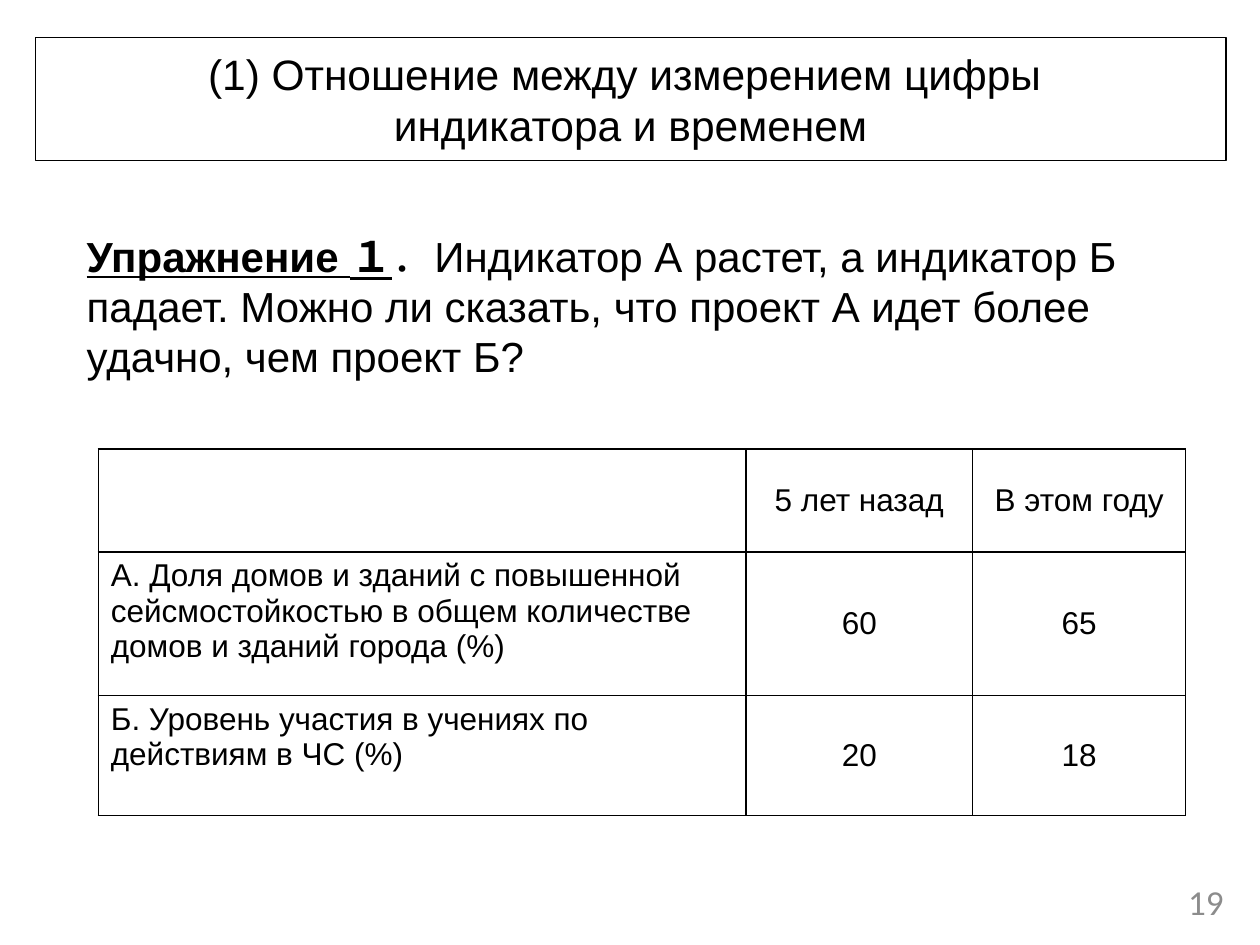
from dataclasses import dataclass

from lxml import etree
from pptx import Presentation
from pptx.dml.color import RGBColor
from pptx.enum.shapes import MSO_SHAPE
from pptx.enum.text import MSO_ANCHOR, PP_ALIGN
from pptx.oxml.ns import qn
from pptx.util import Inches, Pt

RECTANGLE = MSO_SHAPE.RECTANGLE
TOP, MIDDLE = MSO_ANCHOR.TOP, MSO_ANCHOR.MIDDLE
LEFT, CENTER, RIGHT = PP_ALIGN.LEFT, PP_ALIGN.CENTER, PP_ALIGN.RIGHT


@dataclass(frozen=True)
class Theme:
    ink: str = "000000"
    paper: str = "FFFFFF"
    muted: str = "8C8C8C"
    font: str = "Arial"
    number_font: str = "Calibri"
    title_size: float = 24.3
    body_size: float = 24
    table_size: float = 18
    number_size: float = 20
    frame_width: float = 0.75
    border_width: float = 1


class Page:
    """One blank slide; positions and sizes are shares of its width and height."""

    def __init__(self, deck, theme):
        self.deck, self.theme = deck, theme
        self.slide = deck.slides.add_slide(deck.slide_layouts[6])

    def area(self, left, top, width, height):
        across, down = self.deck.slide_width, self.deck.slide_height
        return [int(share * side) for share, side in
                zip((left, top, width, height), (across, down, across, down))]

    def style(self, para, size, align=LEFT, color=None, font=None):
        para.alignment = align
        para.font.size = Pt(size)
        para.font.name = font or self.theme.font
        para.font.color.rgb = RGBColor.from_string(color or self.theme.ink)

    def title(self, text, *place):
        box = self.slide.shapes.add_shape(RECTANGLE, *self.area(*place))
        box.shadow.inherit = False
        box.fill.background()
        box.line.color.rgb = RGBColor.from_string(self.theme.ink)
        box.line.width = Pt(self.theme.frame_width)
        box.text_frame.vertical_anchor = MIDDLE
        box.text_frame.text = text
        self.style(box.text_frame.paragraphs[0], self.theme.title_size, CENTER)

    def text_box(self, place, anchor=TOP):
        frame = self.slide.shapes.add_textbox(*self.area(*place)).text_frame
        frame.word_wrap = True
        frame.vertical_anchor = anchor
        return frame.paragraphs[0]

    def exercise(self, label, question, *place):
        para = self.text_box(place)
        self.style(para, self.theme.body_size)
        para.space_before = Pt(0.2 * self.theme.body_size)
        span = para.add_run()
        span.text = label
        span.font.bold = span.font.underline = True
        para.add_run().text = question

    def number(self, text, *place):
        para = self.text_box(place, MIDDLE)
        para.text = text
        self.style(para, self.theme.number_size, RIGHT,
                   self.theme.muted, self.theme.number_font)

    def borders(self, cell):
        props = cell._tc.get_or_add_tcPr()
        for index, side in enumerate(("a:lnL", "a:lnR", "a:lnT", "a:lnB")):
            line = etree.Element(qn(side), w=str(Pt(self.theme.border_width)))
            fill = etree.SubElement(line, qn("a:solidFill"))
            etree.SubElement(fill, qn("a:srgbClr"), val=self.theme.ink)
            props.insert(index, line)

    def table(self, rows, widths, heights, left, top):
        place = self.area(left, top, sum(widths), sum(heights))
        grid = self.slide.shapes.add_table(len(rows), len(widths), *place).table
        for column, share in zip(grid.columns, widths):
            column.width = int(share * self.deck.slide_width)
        for row, share in zip(grid.rows, heights):
            row.height = int(share * self.deck.slide_height)
        for row, texts in zip(grid.rows, rows):
            for index, (cell, text) in enumerate(zip(row.cells, texts)):
                cell.text = text
                cell.vertical_anchor = MIDDLE if index else TOP
                cell.fill.solid()
                cell.fill.fore_color.rgb = RGBColor.from_string(self.theme.paper)
                para = cell.text_frame.paragraphs[0]
                self.style(para, self.theme.table_size, CENTER if index else LEFT)
                para.font.bold = False
                self.borders(cell)


def main():
    deck = Presentation()
    deck.slide_width, deck.slide_height = Inches(10), Inches(7.5)
    page = Page(deck, Theme())

    # Heading
    page.title("(1) Отношение между измерением цифры \vиндикатора и временем",
               0.028, 0.04, 0.945, 0.13)

    # Exercise
    page.exercise("Упражнение １",
                  "．Индикатор А растет, а индикатор Б падает. Можно ли сказать, "
                  "что проект А идет более удачно, чем проект Б?",
                  0.059, 0.237, 0.9, 0.66)

    # Indicators then and now
    page.table([
        ("", "5 лет назад", "В этом году"),
        ("А. Доля домов и зданий с повышенной сейсмостойкостью "
         "в общем количестве домов и зданий города (%)", "60", "65"),
        ("Б. Уровень участия в учениях по действиям в ЧС (%)", "20", "18"),
    ], widths=(0.514, 0.18, 0.169), heights=(0.109, 0.152, 0.127),
        left=0.078, top=0.475)

    # Page number
    page.number("19", 0.717, 0.927, 0.264, 0.053)

    deck.save("out.pptx")


if __name__ == "__main__":
    main()
